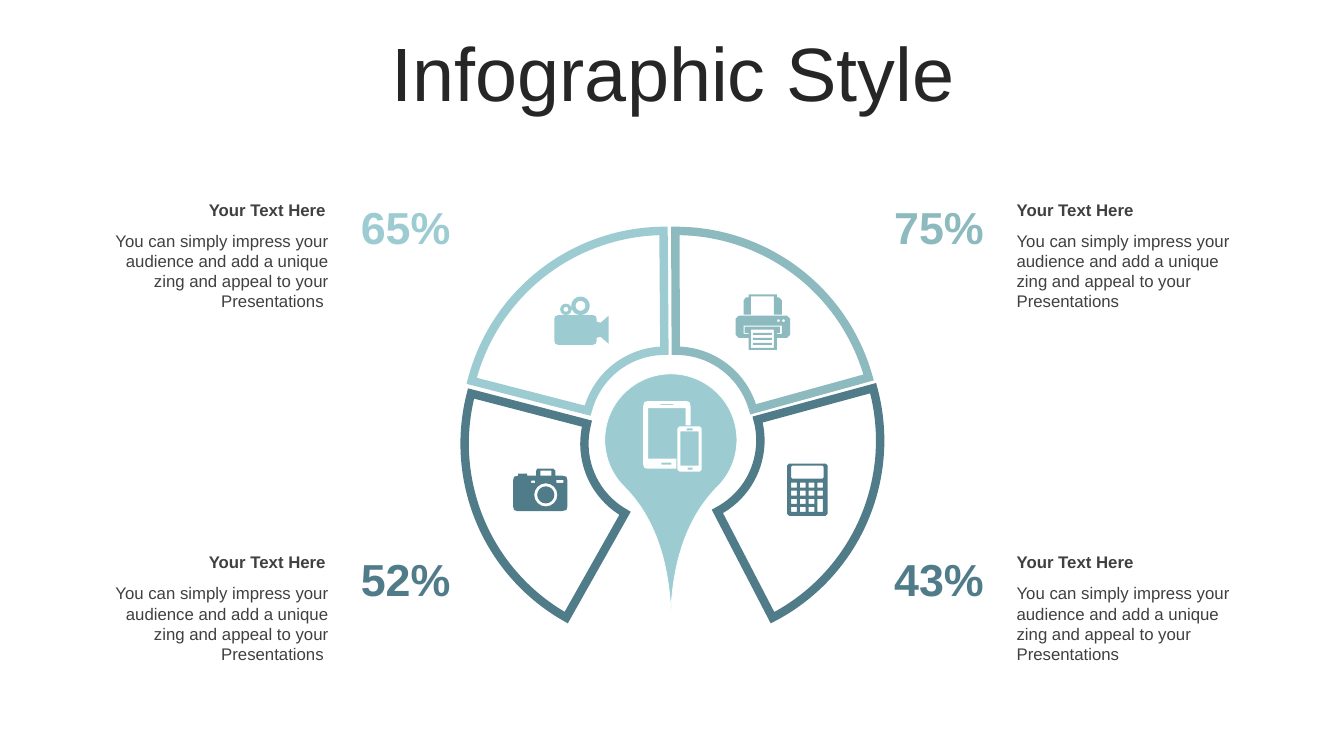
import math

from lxml import etree
from pptx import Presentation
from pptx import util as u
from pptx.dml.color import RGBColor
from pptx.enum import shapes, text
from pptx.oxml.ns import qn

HUES = {"sky": "9CCCD2", "sage": "8CBABE", "steel": "507C89",
        "white": "FFFFFF", "title": "262626", "body": "404040"}
GRID = u.Cm(2.54) / 100  # icons are drawn in hundredths of an inch
FINE = 100               # steps inside one grid unit
ARC = shapes.MSO_SHAPE.BLOCK_ARC
DROP = shapes.MSO_SHAPE.TEAR
LEFT, MID, RIGHT = text.PP_ALIGN.LEFT, text.PP_ALIGN.CENTER, text.PP_ALIGN.RIGHT


def hue(name):
    return RGBColor.from_string(HUES[name])


def disc(x, y, r, steps=16):
    """Points evenly spaced along a circle."""
    turns = [math.tau * i / steps for i in range(steps)]
    return [(x + r * math.cos(t), y + r * math.sin(t)) for t in turns]


def box(x, y, w, h, cut=0):
    """Outline of a rectangle, with its corners cut off if asked."""
    r, b = x + w, y + h
    if not cut:
        return [(x, y), (r, y), (r, b), (x, b)]
    return [(x + cut, y), (r - cut, y), (r, y + cut), (r, b - cut),
            (r - cut, b), (x + cut, b), (x, b - cut), (x, y + cut)]


def write(frame, words, size=12, color="body", bold=False, align=LEFT, edge=None):
    """Put one formatted paragraph in a text frame and return it."""
    para = frame.paragraphs[0]
    para.alignment = align
    run = para.add_run()
    run.text = words
    font = run.font
    font.name, font.size, font.bold = "Arial", u.Pt(size), bold
    font.color.rgb = hue(color)
    if edge:
        line = etree.Element(qn("a:ln"), w=str(u.Pt(1)))
        fill = etree.SubElement(line, qn("a:solidFill"))
        etree.SubElement(fill, qn("a:srgbClr"), val=HUES[edge])
        run._r.get_or_add_rPr().insert(0, line)
    return para


class Board:
    def __init__(self, deck):
        self.slide = deck.slides.add_slide(deck.slide_layouts[5])
        self.shapes = self.slide.shapes

    def title(self, words):
        head = self.shapes.title
        head.left, head.top = u.Cm(0.89), u.Cm(0.94)
        head.width, head.height = u.Cm(32.16), u.Cm(2.01)
        frame = head.text_frame
        frame.auto_size = text.MSO_AUTO_SIZE.NONE
        frame.vertical_anchor = text.MSO_ANCHOR.MIDDLE
        para = write(frame, words, size=54, color="title", align=MID)
        para.line_spacing, para.space_before = 0.9, u.Pt(10)

    def label(self, words, x, y, w, h, **style):
        area = self.shapes.add_textbox(u.Cm(x), u.Cm(y), u.Cm(w), u.Cm(h))
        frame = area.text_frame
        frame.word_wrap = True
        frame.auto_size = text.MSO_AUTO_SIZE.SHAPE_TO_FIT_TEXT
        write(frame, words, **style)

    def form(self, kind, x, y, size, turn, tweaks, fill, line, width):
        item = self.shapes.add_shape(kind, u.Cm(x), u.Cm(y), u.Cm(size), u.Cm(size))
        item.rotation = turn
        for i, value in enumerate(tweaks):
            item.adjustments[i] = value
        item.shadow.inherit = False
        item.fill.solid()
        item.fill.fore_color.rgb = hue(fill)
        item.line.color.rgb = hue(line)
        item.line.width = u.Pt(width)
        edge = item.line._get_or_add_ln()
        etree.SubElement(edge, qn("a:miter"), lim="800000")

    def icon(self, x, y, color, loops):
        """Draw closed loops as one outline; a loop inside another is a hole."""
        pen = None
        for loop in loops:
            dots = [(px * FINE, py * FINE) for px, py in loop]
            if pen is None:
                pen = self.shapes.build_freeform(*dots[0], scale=GRID / FINE)
            else:
                pen.move_to(*dots[0])
            pen.add_line_segments(dots[1:], close=True)
        item = pen.convert_to_shape(u.Cm(x), u.Cm(y))
        item.shadow.inherit = False
        item.fill.solid()
        item.fill.fore_color.rgb = hue(color)
        item.line.fill.background()


TABLET = [(4, 0), (43, 0), (46, 1), (47, 5), (47, 24), (42, 24), (42, 7), (5, 7),
          (5, 57), (33, 57), (33, 67), (4, 67), (1, 66), (0, 63), (0, 5), (1, 1)]
PHONES = [TABLET, box(18, 61, 10, 2), box(17, 3, 13, 1), box(34, 25, 24, 45, 2),
          box(37, 30, 18, 34), box(43, 27, 6, 2), box(44, 66, 5, 2)]

KEYS = [box(4 + 8.67 * col, 19 + 8 * row, 5.5, 5)
        for row in range(4) for col in range(4) if col < 3 or row < 2]
COUNTER = [box(0, 0, 40, 52, 2), box(4, 2, 32, 13, 1), *KEYS, box(30, 35, 5.5, 13)]

FEED = [(13, 0), (41, 0), (41, 3), (43, 3), (46, 6), (46, 20), (38, 20), (38, 2),
        (15, 2), (15, 20), (8, 20), (8, 6), (10, 3), (13, 3)]
CASE = [(3, 21), (51, 21), (54, 24), (54, 40), (51, 43), (41, 43), (41, 55),
        (13, 55), (13, 43), (3, 43), (0, 40), (0, 24)]
TRAY = [(8, 31), (46, 31), (46, 39), (41, 39), (41, 38), (44, 38), (44, 32),
        (9, 32), (9, 38), (13, 38), (13, 39), (8, 39)]
PRINTER = [FEED, CASE, TRAY, box(15, 35, 23, 18),
           *[box(17, y, 19, 2) for y in (38, 43, 48)],
           *[disc(x, 26, 1.5, 6) for x in (42.5, 47.5)]]

BODY = [(24, 0), (40, 0), (42, 2), (42, 7), (49, 7), (53, 8), (54, 12), (54, 37),
        (53, 41), (49, 42), (4, 42), (1, 41), (0, 37), (0, 12), (1, 8), (5, 7),
        (5, 5), (14, 5), (14, 7), (23, 7), (23, 2)]
CAMERA = [BODY, disc(32.5, 26, 11.5), disc(32.5, 26, 8.5), box(18, 12, 4, 2),
          box(43, 11, 7, 3), box(27, 2, 11, 5)]

REEL = [(4, 18.5), (38, 18.5), (41, 19.5), (42, 22), (42, 25), (46, 26), (54, 19),
        (54, 47), (46, 40), (42, 41), (42, 44), (41, 47), (38, 48), (4, 48),
        (1, 47), (0, 44), (0, 22), (1, 19.5)]
MOVIE = [REEL, disc(26, 9.3, 9.2), disc(26, 9.3, 5, 12),
         disc(11.5, 12.8, 5.7, 12), disc(11.5, 12.8, 2.5, 8)]

ARCS = [(11.73, 5.82, 0, 116.65, "sky"), (12.01, 5.82, 75, 116.85, "sage"),
        (12.12, 6.07, 153, 115.08, "steel"), (11.71, 6.15, 285, 116.65, "steel")]
ICONS = [(16.21, 10.11, "white", PHONES), (19.84, 11.68, "steel", COUNTER),
         (18.54, 7.42, "sage", PRINTER), (12.93, 11.81, "steel", CAMERA),
         (13.97, 7.47, "sky", MOVIE)]
# Each side: body left, heading left, share left, alignment, tail of the body
SIDES = {"right": (25.37, 25.37, 22.23, LEFT, ""),
         "left": (2.46, 2.44, 8.79, RIGHT, " ")}
NOTES = [("right", 0, "75%", "sage"), ("right", 1, "43%", "steel"),
         ("left", 0, "65%", "sky"), ("left", 1, "52%", "steel")]
STORY = ("You can simply impress your audience and add a unique zing "
         "and appeal to your Presentations")


def main():
    deck = Presentation()
    deck.slide_width, deck.slide_height = u.Cm(33.87), u.Cm(19.05)
    board = Board(deck)
    board.title("Infographic Style")
    for x, y, turn, start, color in ARCS:
        board.form(ARC, x, y, 10.06, turn, (start, 161.74, 0.3), "white", color, 6)
    board.form(DROP, 15.24, 9.42, 3.33, 135, (1.83,), "sky", "white", 0.5)
    for side, row, share, color in NOTES:
        body, head, mark, align, tail = SIDES[side]
        top = 4.9 + 8.89 * row
        board.label(STORY + tail, body, top + 0.78, 6.07, 2.31, align=align)
        board.label("Your Text Here", head, top, 6.02, 0.76, bold=True, align=align)
        board.label(share, mark, top, 2.87, 1.63, size=32, color=color,
                    bold=True, align=MID, edge="white")
    for x, y, color, loops in ICONS:
        board.icon(x, y, color, loops)
    deck.save("out.pptx")


if __name__ == "__main__":
    main()
